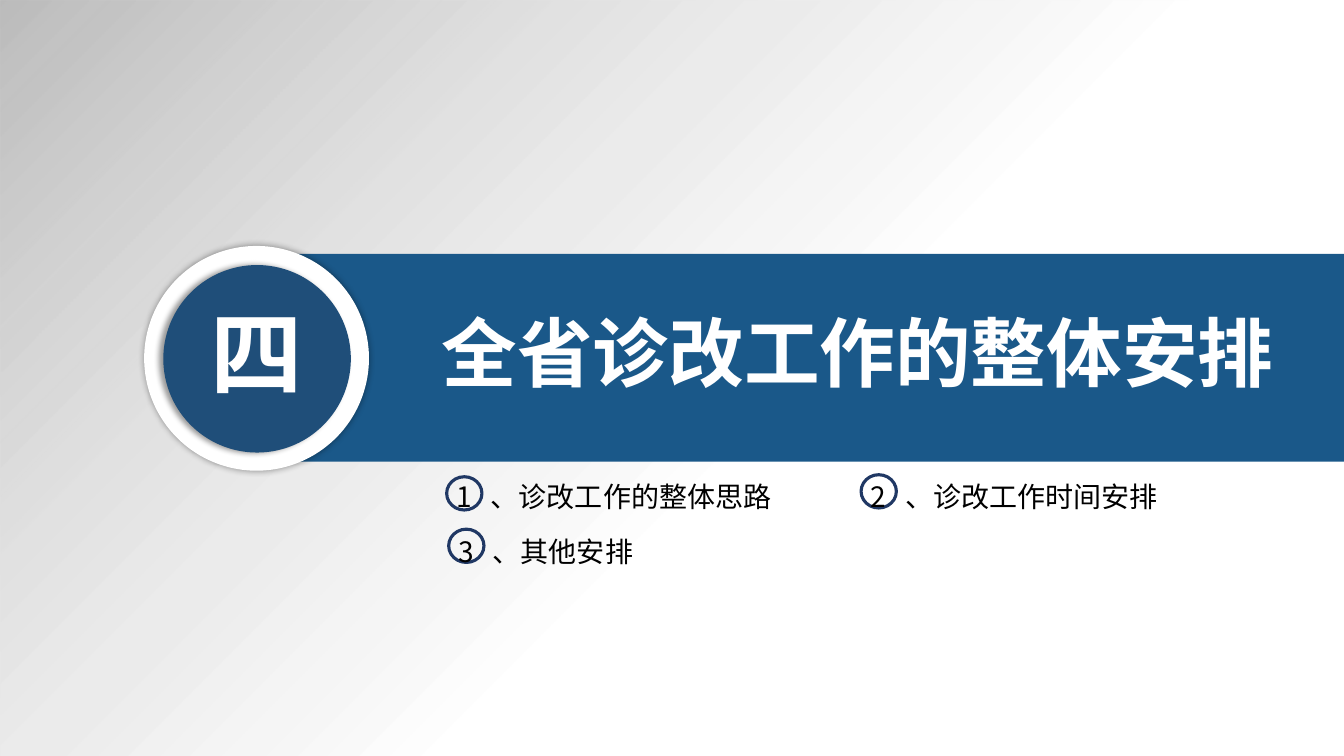
"""Builds the section slide for part four, with its heading band and three topics."""
from lxml import etree
from pptx import Presentation
from pptx.dml.color import RGBColor
from pptx.enum.shapes import MSO_SHAPE
from pptx.enum.text import MSO_ANCHOR, MSO_AUTO_SIZE, PP_ALIGN
from pptx.oxml import parse_xml
from pptx.oxml.ns import qn
from pptx.util import Inches, Pt

RECT, OVAL = MSO_SHAPE.RECTANGLE, MSO_SHAPE.OVAL
TOP, LEFT, FIT = MSO_ANCHOR.TOP, PP_ALIGN.LEFT, MSO_AUTO_SIZE.SHAPE_TO_FIT_TEXT
FONT = "Noto Sans CJK SC"
NS = 'xmlns:a="http://schemas.openxmlformats.org/drawingml/2006/main"'


def add_shape(kind, box, fill=None, line=None):
    sp = s.shapes.add_shape(kind, *map(Inches, box))
    sp.shadow.inherit = False
    if fill:
        sp.fill.solid()
        sp.fill.fore_color.rgb = RGBColor.from_string(fill)
    else:
        sp.fill.background()
    if line:
        sp.line.color.rgb = RGBColor.from_string(line)
        sp.line.width = Pt(2.25)
    else:
        sp.line.fill.background()
    return sp


def set_text(sp, box, text, size, color, bold=False, wrap=True):
    sp.left, sp.top, sp.width, sp.height = map(Inches, box)
    tf = sp.text_frame
    tf.text = text
    tf.word_wrap = wrap
    tf.auto_size = FIT
    tf.vertical_anchor = TOP
    p = tf.paragraphs[0]
    p.alignment = LEFT
    for r in p.runs:
        r.font.size, r.font.bold, r.font.name = Pt(size), bold, FONT
        r.font.color.rgb = RGBColor.from_string(color)
        etree.SubElement(r.font._element, qn("a:ea"), typeface=FONT)
    return p


prs = Presentation()
prs.slide_width, prs.slide_height = Inches(13.33), Inches(7.5)
s = prs.slides.add_slide(prs.slide_layouts[5])

stops = "".join(
    f'<a:gs pos="{pos * 1000}"><a:srgbClr val="{color}"><a:alpha val="{alpha * 1000}"/></a:srgbClr></a:gs>'
    for pos, color, alpha in [(0, "A6A6A6", 50), (27, "D6D6D6", 46), (57, "FFFFFF", 45)])
for layer in range(2):
    sp = add_shape(RECT, (0, 0, 13.33, 7.5))
    grad = parse_xml(f'<a:gradFill {NS} rotWithShape="1"><a:gsLst>{stops}</a:gsLst>'
                     '<a:lin ang="2700000" scaled="0"/></a:gradFill>')
    sp_pr = sp.element.spPr
    sp_pr.replace(sp_pr.find(qn("a:noFill")), grad)

add_shape(RECT, (2.4, 2.52, 10.93, 2.06), "1A5889")
title = s.shapes.title
title.element.getparent().append(title.element)
set_text(title, (4.28, 2.98, 8.53, 1.01), "全省诊改工作的整体安排", 54, "FFFFFF", True, False)

for box, fill, blur, dist, angle in [
    ((1.43, 2.44, 2.23, 2.23), "FFFFFF", 5, 0, 0),
    ((1.62, 2.63, 1.86, 1.86), "1F4E79", 4, 3, 180),
]:
    sp = add_shape(OVAL, box, fill)
    sp.element.spPr.find(qn("a:effectLst")).append(parse_xml(
        f'<a:outerShdw {NS} blurRad="{Pt(blur)}" dist="{Pt(dist)}" dir="{angle * 60000}" '
        'algn="ctr" rotWithShape="0"><a:srgbClr val="000000"><a:alpha val="40000"/>'
        '</a:srgbClr></a:outerShdw>'))
box = (1.99, 2.89, 1.61, 1.21)
set_text(s.shapes.add_textbox(*map(Inches, box)), box, "四", 66, "FFFFFF", True)

topics = [
    (4.43, 4.61, 4.74, 4.73, "诊改工作的整体思路"),
    (8.54, 4.61, 4.32, 4.71, "诊改工作时间安排"),
    (4.45, 5.15, 4, 5.25, "其他安排"),
]
for number, (left, top, width, ring_top, topic) in enumerate(topics, 1):
    add_shape(OVAL, (left, ring_top, 0.35, 0.33), line="203864")
    box = (left, top, width, 0.5)
    sp = s.shapes.add_textbox(*map(Inches, box))
    p = set_text(sp, box, f"{number}\t、{topic}", 20, "000000")
    p.line_spacing = 1.3
    tabs = etree.SubElement(p._p.get_or_add_pPr(), qn("a:tabLst"))
    etree.SubElement(tabs, qn("a:tab"), pos=str(Inches(0.34)), algn="l")

prs.save("out.pptx")
